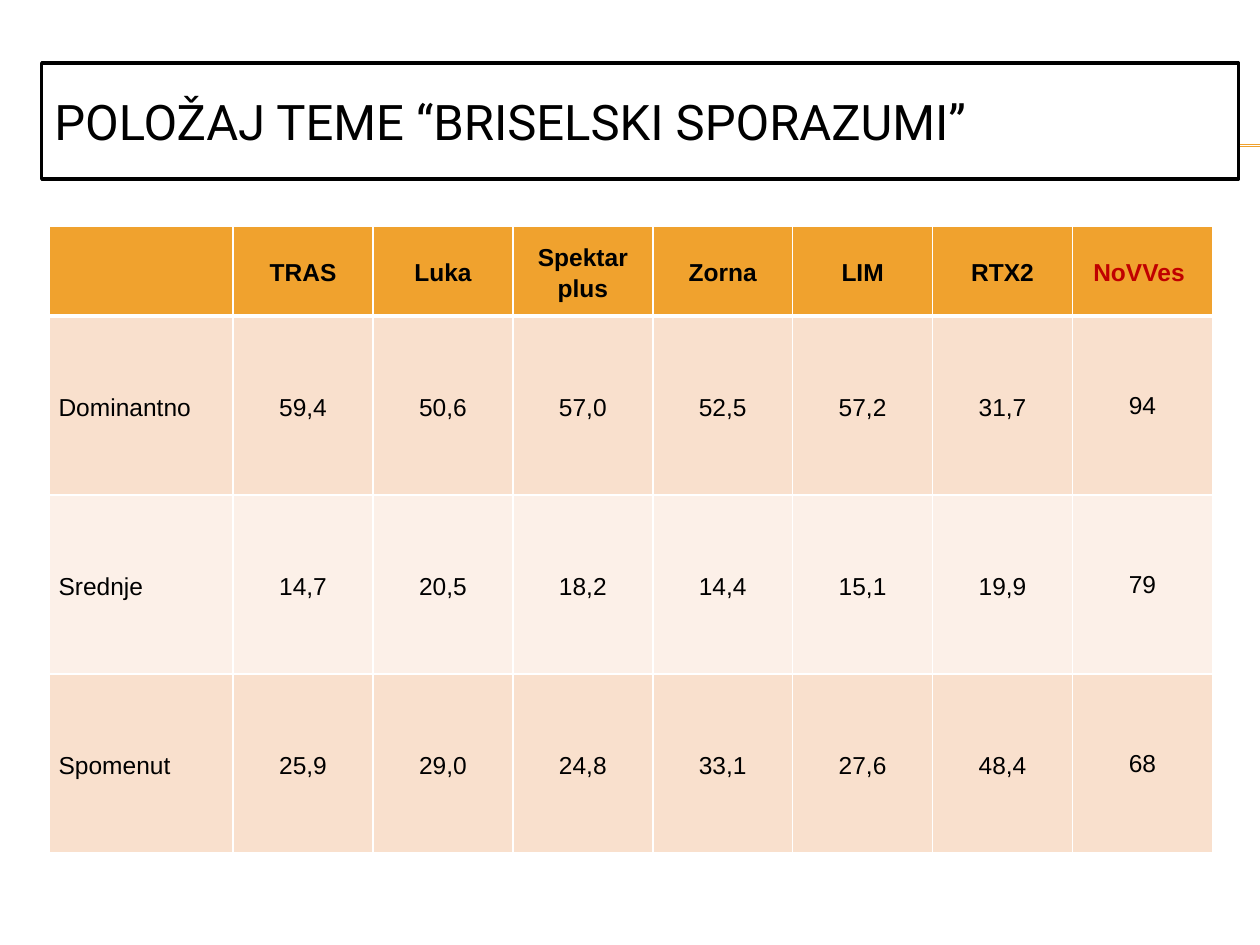
from lxml import etree
from pptx import Presentation
from pptx.dml.color import RGBColor
from pptx.enum import shapes, text
from pptx.oxml.ns import qn
from pptx.util import Cm, Pt

TITLE = "POLOŽAJ TEME “BRISELSKI SPORAZUMI”"
ROWS = [
    ["", "TRAS", "Luka", "Spektar plus", "Zorna", "LIM", "RTX2", "NoVVes "],
    ["Dominantno", "59,4", "50,6", "57,0", "52,5", "57,2", "31,7", "94"],
    ["Srednje", "14,7", "20,5", "18,2", "14,4", "15,1", "19,9", "79"],
    ["Spomenut", "25,9", "29,0", "24,8", "33,1", "27,6", "48,4", "68"],
]
LAST = len(ROWS[0]) - 1

ORANGE, PEACH, CREAM = "F0A22E", "F9E0CD", "FCF0E8"
WHITE, BLACK, RED = "FFFFFF", "000000", "C00000"
ROW_FILLS = [ORANGE, PEACH, CREAM, PEACH]

LABEL_WIDTH, VALUE_WIDTH = 3.7, 2.82
HEADER_HEIGHT, ROW_HEIGHT = 1.8, 3.61


def paint(target, colour):
    """Set a solid hex colour on a fill or on a font or line."""
    if hasattr(target, "solid"):
        target.solid()
        target.fore_color.rgb = RGBColor.from_string(colour)
    else:
        target.color.rgb = RGBColor.from_string(colour)


def style_text(para, font, size, colour, bold=False):
    for span in para.runs:
        span.font.name = font
        span.font.size = Pt(size)
        span.font.bold = bold
        paint(span.font, colour)


def add_rule(page, y):
    rule = page.shapes.add_connector(
        shapes.MSO_CONNECTOR.STRAIGHT, Cm(1.42), Cm(y), Cm(25.4), Cm(y))
    paint(rule.line, ORANGE)
    rule.line.width = Pt(0.75)
    etree.SubElement(rule._element.spPr, qn("a:effectLst"))
    # Behind the title box
    page.shapes._spTree.insert(2, rule._element)


def add_borders(cell, top, bottom):
    """White borders; they must come before the fill in the cell properties."""
    properties = cell._tc.get_or_add_tcPr()
    sides = [("L", 1), ("R", 1), ("T", top), ("B", bottom)]
    for position, (side, width) in enumerate(sides):
        border = etree.Element(qn(f"a:ln{side}"), w=str(Pt(width)))
        fill = etree.SubElement(border, qn("a:solidFill"))
        etree.SubElement(fill, qn("a:srgbClr"), val=WHITE)
        properties.insert(position, border)


def fill_cell(cell, row, column, words):
    header = row == 0
    total = column == LAST and not header
    cell.text_frame.text = words
    cell.vertical_anchor = text.MSO_ANCHOR.MIDDLE
    side = Cm(0.03 if total else 0.18)
    cell.margin_left = cell.margin_right = side
    cell.margin_top = Cm(0.03 if total else 0)
    cell.margin_bottom = 0

    para = cell.text_frame.paragraphs[0]
    para.alignment = text.PP_ALIGN.CENTER if column else text.PP_ALIGN.LEFT
    if not total:
        para.line_spacing = 1.15
    colour = RED if header and column == LAST else BLACK
    style_text(para, "Arial", 14, colour, bold=header)

    paint(cell.fill, ROW_FILLS[row])
    add_borders(cell, top=3 if row == 1 else 1, bottom=3 if header else 1)


def add_title(page):
    box = page.shapes.title
    box.left, box.top, box.width, box.height = Cm(0.84), Cm(1.27), Cm(24.13), Cm(2.34)
    paint(box.fill, WHITE)
    paint(box.line, BLACK)
    box.line.width = Pt(2)
    frame = box.text_frame
    frame.text = TITLE
    frame.word_wrap = True
    frame.auto_size = text.MSO_AUTO_SIZE.NONE
    frame.vertical_anchor = text.MSO_ANCHOR.MIDDLE
    frame.paragraphs[0].alignment = text.PP_ALIGN.LEFT
    style_text(frame.paragraphs[0], "Roboto", 28, BLACK)


def add_results(page):
    widths = [LABEL_WIDTH] + [VALUE_WIDTH] * LAST
    heights = [HEADER_HEIGHT] + [ROW_HEIGHT] * (len(ROWS) - 1)
    table = page.shapes.add_table(
        len(ROWS), len(widths), Cm(1), Cm(4.57), Cm(sum(widths)), Cm(sum(heights))).table
    for column, width in zip(table.columns, widths):
        column.width = Cm(width)
    for row, height in zip(table.rows, heights):
        row.height = Cm(height)
    for row, line in enumerate(ROWS):
        for column, words in enumerate(line):
            fill_cell(table.cell(row, column), row, column, words)


def main():
    deck = Presentation()
    deck.slide_width, deck.slide_height = Cm(25.4), Cm(19.05)
    page = deck.slides.add_slide(deck.slide_layouts[5])
    paint(page.background.fill, WHITE)
    add_title(page)
    for y in (2.92, 2.95):
        add_rule(page, y)
    add_results(page)
    deck.save("out.pptx")


if __name__ == "__main__":
    main()
